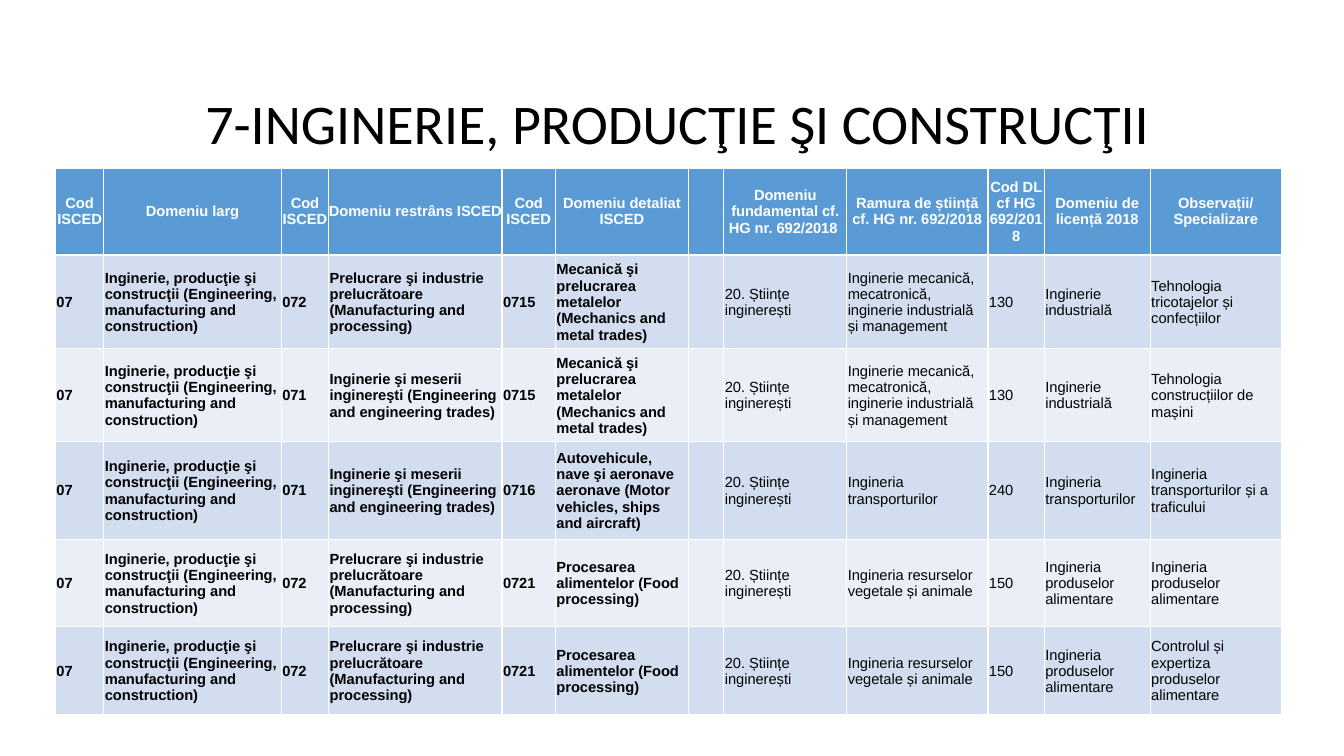
from pptx import Presentation
from pptx import util as u
from pptx.dml.color import RGBColor
from pptx.enum import text

HUES = {"head": "5B9BD5", "odd": "D2DEEF", "even": "EAEFF7",
        "light": "FFFFFF", "dark": "000000"}
COLS = [0.48, 1.76, 0.47, 1.72, 0.53, 1.32, 0.35, 1.22, 1.4, 0.56, 1.05, 1.3]
ROWS = [0.86, 0.93, 0.92, 0.97, 0.87, 0.87]
BOLD = 6  # columns before the empty one are bold

# Wording shared by several rows
broad = ["07", "Inginerie, producţie şi construcţii (Engineering, manufacturing and construction)"]
trade = ["071", "Inginerie şi meserii inginereşti (Engineering and engineering trades)"]
make = ["072", "Prelucrare şi industrie prelucrătoare (Manufacturing and processing)"]
metal = ["0715", "Mecanică şi prelucrarea metalelor (Mechanics and metal trades)"]
motor = ["0716", "Autovehicule, nave şi aeronave aeronave (Motor vehicles, ships and aircraft)"]
food = ["0721", "Procesarea alimentelor (Food processing)"]
field = ["", "20. Științe inginerești"]
plant = ["Inginerie mecanică, mecatronică, inginerie industrială și management",
         "130", "Inginerie industrială"]
moves = ["Ingineria transporturilor", "240", "Ingineria transporturilor"]
crops = ["Ingineria resurselor vegetale și animale", "150", "Ingineria produselor alimentare"]

heads = ["Cod ISCED", "Domeniu larg", "Cod ISCED", "Domeniu restrâns ISCED",
         "Cod ISCED", "Domeniu detaliat ISCED", "",
         "Domeniu fundamental cf. HG nr. 692/2018 ",
         "Ramura de știință cf. HG nr. 692/2018", "Cod DL cf HG 692/2018",
         "Domeniu de licență 2018", "Observații/ Specializare"]
body = [
    (make, metal, plant, "Tehnologia tricotajelor și confecțiilor"),
    (trade, metal, plant, "Tehnologia construcțiilor de mașini"),
    (trade, motor, moves, "Ingineria transporturilor și a traficului"),
    (make, food, crops, "Ingineria produselor alimentare"),
    (make, food, crops, "Controlul și expertiza produselor alimentare"),
]
data = [heads] + [broad + narrow + detail + field + branch + [note]
                  for narrow, detail, branch, note in body]


def style(font, name, size, hue, bold):
    font.name, font.size, font.bold = name, u.Pt(size), bold
    font.color.rgb = RGBColor.from_string(HUES[hue])


deck = Presentation()
deck.slide_width, deck.slide_height = u.Inches(13.33), u.Inches(7.5)
slide = deck.slides.add_slide(deck.slide_layouts[5])

# Title
title = slide.shapes.title
title.left, title.top = u.Inches(1.03), u.Inches(0.89)
title.width, title.height = u.Inches(11.5), u.Inches(0.72)
frame = title.text_frame
frame.text = "7-INGINERIE, PRODUCŢIE ŞI CONSTRUCŢII "
frame.vertical_anchor = text.MSO_ANCHOR.MIDDLE
line = frame.paragraphs[0]
line.alignment, line.line_spacing = text.PP_ALIGN.CENTER, 0.9
style(line.runs[0].font, "Calibri", 40, "dark", False)

# Table grid
table = slide.shapes.add_table(
    len(ROWS), len(COLS), u.Inches(0.55), u.Inches(1.67),
    u.Inches(sum(COLS)), u.Inches(sum(ROWS))).table
for col, wide in zip(table.columns, COLS):
    col.width = u.Inches(wide)
for row, high in zip(table.rows, ROWS):
    row.height = u.Inches(high)

# Cells
for r, words in enumerate(data):
    top = r == 0
    band = "head" if top else "odd" if r % 2 else "even"
    inset = u.Inches(0 if top else 0.01)
    for c, word in enumerate(words):
        cell = table.cell(r, c)
        cell.fill.solid()
        cell.fill.fore_color.rgb = RGBColor.from_string(HUES[band])
        cell.vertical_anchor = text.MSO_ANCHOR.MIDDLE
        cell.margin_left = cell.margin_right = cell.margin_top = inset
        cell.margin_bottom = 0
        if not word:
            continue
        cell.text_frame.text = word
        line = cell.text_frame.paragraphs[0]
        line.alignment = text.PP_ALIGN.CENTER if top else text.PP_ALIGN.LEFT
        style(line.runs[0].font, "Arial", 10.5, "light" if top else "dark", top or c < BOLD)

deck.save("out.pptx")
